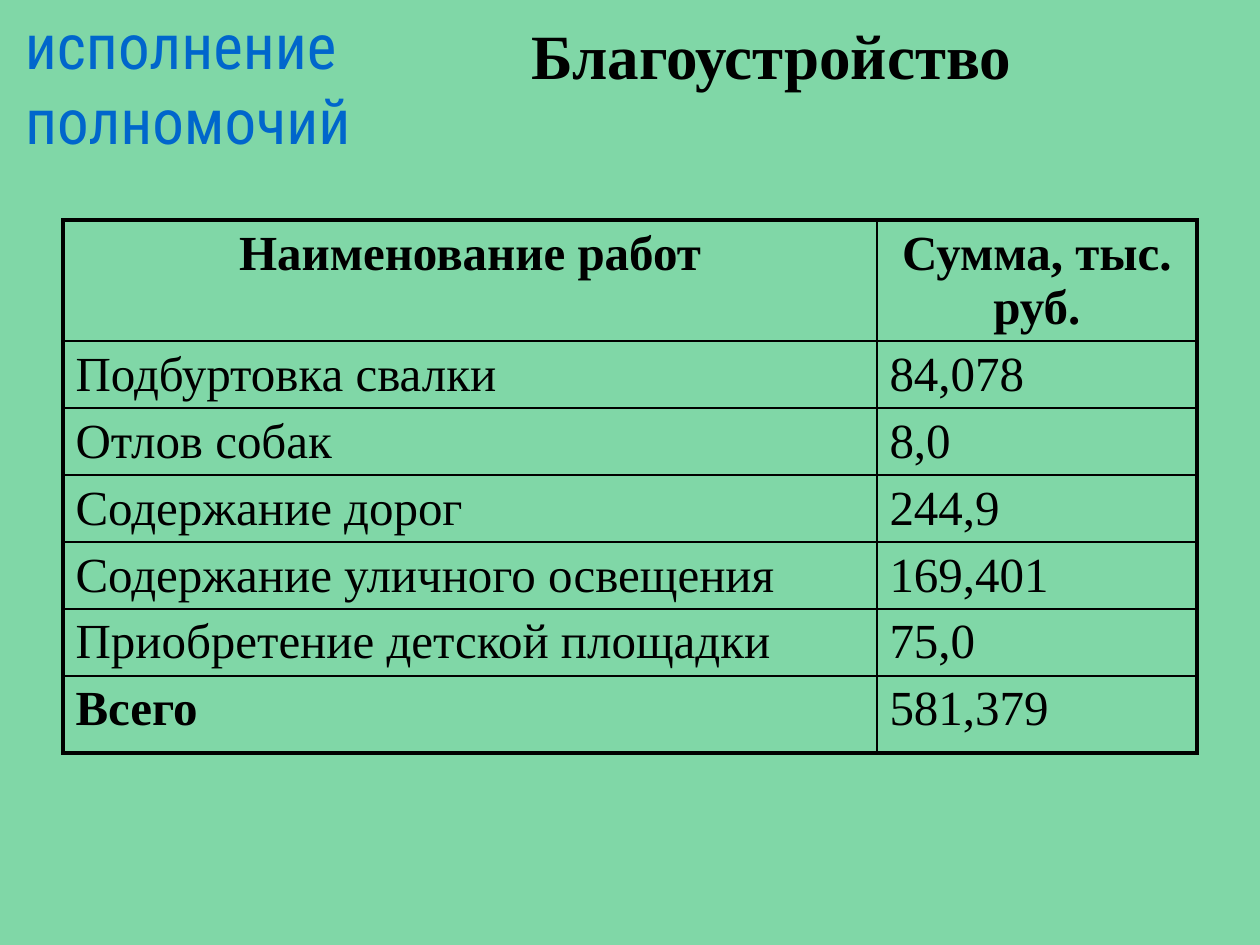
"""Build a slide with a table of landscaping works and their cost."""
from lxml.etree import SubElement
from pptx import Presentation
from pptx.dml.color import RGBColor
from pptx.enum.text import MSO_ANCHOR, PP_ALIGN
from pptx.oxml.ns import qn
from pptx.util import Pt

EMU_PER_PX = 914400 // 126
SLIDE_SIZE = (1260, 945)
BACKGROUND = "80D7A7"
BLACK = "000000"

TITLE = "Благоустройство"
TITLE_BOX = (353, 16, 837, 77)
CAPTION = ["исполнение ", "полномочий"]
CAPTION_BOX = (8, 0, 360, 160)
ROWS = [
    ("Наименование работ", "Сумма, тыс. руб."),
    ("Подбуртовка свалки", "84,078"),
    ("Отлов собак", "8,0"),
    ("Содержание дорог", "244,9"),
    ("Содержание уличного освещения", "169,401"),
    ("Приобретение детской площадки", "75,0"),
    ("Всего", "581,379"),
]
TABLE_ORIGIN = (63, 220)
COLUMN_WIDTHS = [814, 320]
ROW_HEIGHTS = [121] + [67] * 5 + [77]
OUTER_LINE, INNER_LINE = 2.25, 1

TITLE_FONT = {"name": "Times New Roman", "size": Pt(36), "bold": True}
CAPTION_FONT = {"name": "Roboto Condensed", "size": Pt(36), "bold": False}
CELL_FONT = {"name": "Times New Roman", "size": Pt(28)}


def px(length):
    return length * EMU_PER_PX


def color(value):
    return RGBColor.from_string(value)


def write(paragraph, text, font, text_color=BLACK, align=PP_ALIGN.LEFT):
    paragraph.alignment = align
    run = paragraph.add_run()
    run.text = text
    for name, value in font.items():
        setattr(run.font, name, value)
    run.font.color.rgb = color(text_color)


def add_borders(cell, widths):
    properties = cell._tc.get_or_add_tcPr()
    for side, width in widths.items():
        line = SubElement(properties, qn(f"a:ln{side}"), w=str(Pt(width)))
        fill = SubElement(line, qn("a:solidFill"))
        SubElement(fill, qn("a:srgbClr"), val=BLACK)


def add_title(slide):
    title = slide.shapes.title
    title.left, title.top, title.width, title.height = map(px, TITLE_BOX)
    title.text_frame.vertical_anchor = MSO_ANCHOR.MIDDLE
    write(title.text_frame.paragraphs[0], TITLE, TITLE_FONT, align=PP_ALIGN.CENTER)


def add_caption(slide):
    frame = slide.shapes.add_textbox(*map(px, CAPTION_BOX)).text_frame
    frame.word_wrap = True
    for index, text in enumerate(CAPTION):
        paragraph = frame.add_paragraph() if index else frame.paragraphs[0]
        write(paragraph, text, CAPTION_FONT, "0066CC", PP_ALIGN.CENTER)


def add_works_table(slide):
    last_row, last_column = len(ROWS) - 1, len(COLUMN_WIDTHS) - 1
    size = (sum(COLUMN_WIDTHS), sum(ROW_HEIGHTS))
    table = slide.shapes.add_table(
        len(ROWS), len(COLUMN_WIDTHS), *map(px, TABLE_ORIGIN + size)
    ).table
    table.first_row = table.horz_banding = False
    for column, width in zip(table.columns, COLUMN_WIDTHS):
        column.width = px(width)
    for row, height in zip(table.rows, ROW_HEIGHTS):
        row.height = px(height)
    for r, texts in enumerate(ROWS):
        for c, text in enumerate(texts):
            cell = table.cell(r, c)
            bold = r == 0 or (r == last_row and c == 0)
            align = PP_ALIGN.CENTER if r == 0 else PP_ALIGN.LEFT
            write(cell.text_frame.paragraphs[0], text, {**CELL_FONT, "bold": bold}, align=align)
            on_edge = {"L": c == 0, "R": c == last_column, "T": r == 0, "B": r == last_row}
            add_borders(cell, {s: OUTER_LINE if edge else INNER_LINE for s, edge in on_edge.items()})
            cell.fill.background()


def main():
    presentation = Presentation()
    presentation.slide_width, presentation.slide_height = map(px, SLIDE_SIZE)
    slide = presentation.slides.add_slide(presentation.slide_layouts[5])
    slide.background.fill.solid()
    slide.background.fill.fore_color.rgb = color(BACKGROUND)
    add_title(slide)
    add_works_table(slide)
    add_caption(slide)
    presentation.save("out.pptx")


if __name__ == "__main__":
    main()
